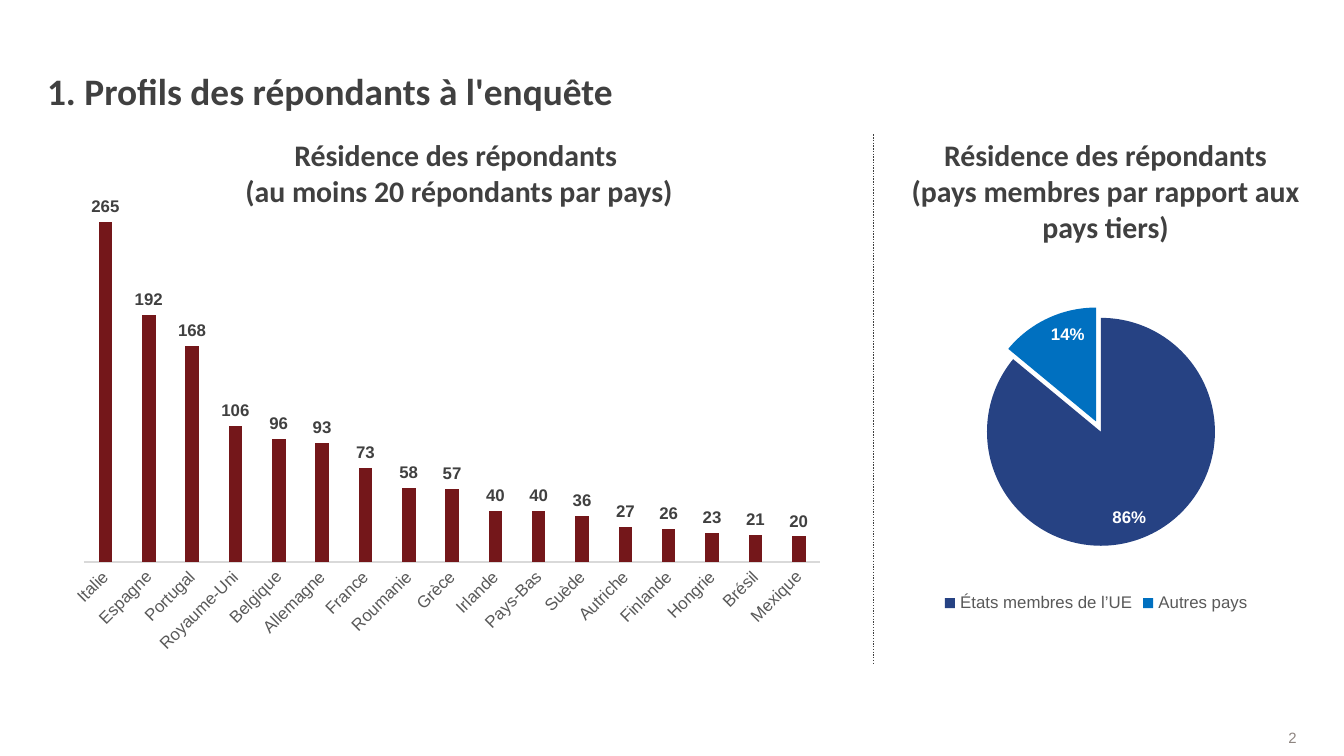
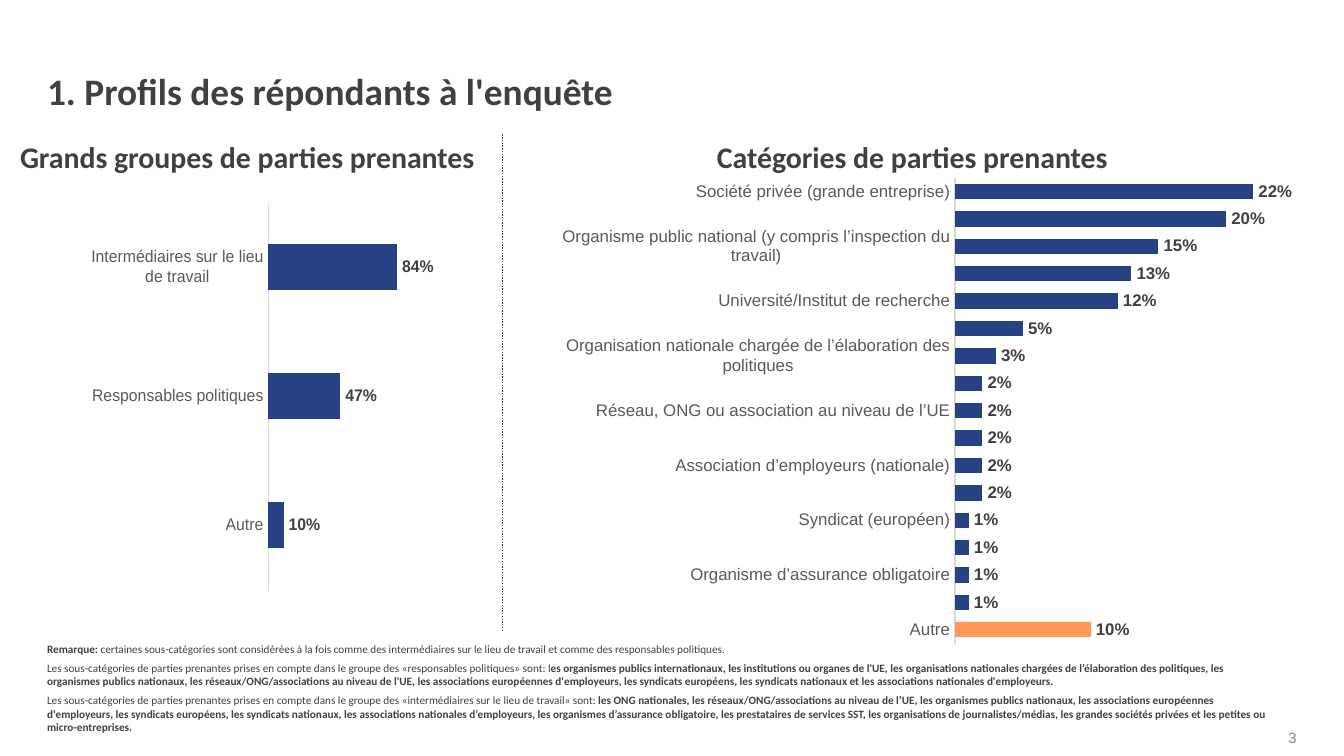
from lxml.etree import SubElement
from pptx import Presentation
from pptx.chart.data import CategoryChartData
from pptx.dml.color import RGBColor
from pptx.enum.chart import XL_CHART_TYPE as ChartType
from pptx.enum.chart import XL_LABEL_POSITION as LabelPosition
from pptx.enum.chart import XL_LEGEND_POSITION as LegendPosition
from pptx.enum.chart import XL_TICK_MARK as TickMark
from pptx.enum.dml import MSO_LINE
from pptx.enum.shapes import MSO_CONNECTOR, MSO_SHAPE
from pptx.enum.text import MSO_ANCHOR, MSO_AUTO_SIZE, PP_ALIGN
from pptx.oxml import parse_xml
from pptx.oxml.ns import nsdecls, qn
from pptx.util import Cm, Pt

# Shared style
DARK, GREY, AXIS, WHITE = "404040", "595959", "D9D9D9", "FFFFFF"
PAGE_GREY, MAROON, NAVY, BLUE, ORANGE = "8E8581", "74171A", "264283", "0070C0", "FF9956"
HEADING_FONT, CHART_FONT = "Calibri", "Arial"
COMPARISON_LAYOUT = 4
TITLE = "1. Profils des répondants à l'enquête"
DIVIDER_TOP = 2.54

# Content
COUNTRIES = {
    "Italie": 265, "Espagne": 192, "Portugal": 168, "Royaume-Uni": 106,
    "Belgique": 96, "Allemagne": 93, "France": 73, "Roumanie": 58, "Grèce": 57,
    "Irlande": 40, "Pays-Bas": 40, "Suède": 36, "Autriche": 27, "Finlande": 26,
    "Hongrie": 23, "Brésil": 21, "Mexique": 20,
}
MEMBERSHIP = {"États membres de l’UE": 0.86, "Autres pays": 0.14}
GROUPS = {
    "Intermédiaires sur le lieu de travail": 0.84,
    "Responsables politiques": 0.47,
    "Autre": 0.1,
}
CATEGORIES = {
    "Société privée (grande entreprise)": 0.22,
    "Société privée (PME)": 0.2,
    "Organisme public national (y compris l’inspection du travail)": 0.15,
    "Prestataire de services SST, par ex. consultant": 0.13,
    "Université/Institut de recherche": 0.12,
    "Syndicat (national)": 0.05,
    "Organisation nationale chargée de l’élaboration des politiques": 0.03,
    "Organisation non gouvernementale (ONG) nationale": 0.02,
    "Réseau, ONG ou association au niveau de l’UE": 0.02,
    "Institution ou organe de l’UE": 0.02,
    "Association d’employeurs (nationale)": 0.02,
    "Organisme public international": 0.02,
    "Syndicat (européen)": 0.01,
    "Organisation de journalistes/médias": 0.01,
    "Organisme d’assurance obligatoire": 0.01,
    "Association d’employeurs (européenne)": 0.01,
    "Autre": 0.1,
}
# Each note is a list of (text, bold) runs
NOTES = [
    [("Remarque: ", True),
     ("certaines sous-catégories sont considérées à la fois comme des intermédiaires "
      "sur le lieu de travail et comme des responsables politiques.", False)],
    [("Les sous-catégories de parties prenantes prises en compte dans le groupe des "
      "«responsables politiques» sont: l", False),
     ("es organismes publics internationaux, les institutions ou organes de l'UE, les "
      "organisations nationales chargées de l’élaboration des politiques, les organismes "
      "publics nationaux, les réseaux/ONG/associations au niveau de l'UE, les associations "
      "européennes d'employeurs, les syndicats européens, les syndicats nationaux et les "
      "associations nationales d'employeurs.", True)],
    [("Les sous-catégories de parties prenantes prises en compte dans le groupe des "
      "«intermédiaires sur le lieu de travail» sont: ", False),
     ("les ONG nationales, les réseaux/ONG/associations au niveau de l’UE, les organismes "
      "publics nationaux, les associations européennes d'employeurs, les syndicats européens, "
      "les syndicats nationaux, les associations nationales d’employeurs, les organismes "
      "d’assurance obligatoire, les prestataires de services SST, les organisations de "
      "journalistes/médias, les grandes sociétés privées et les petites ou "
      "micro-entreprises.", True)],
]


def color(hex_string):
    return RGBColor.from_string(hex_string)


def set_font(font, size, hex_string, name=CHART_FONT, bold=False):
    font.size, font.name, font.bold = Pt(size), name, bold
    font.color.rgb = color(hex_string)


def place(shape, box):
    shape.left, shape.top, shape.width, shape.height = (Cm(value) for value in box)


def set_frame(text_frame, anchor, top_margin=0):
    text_frame.word_wrap = True
    text_frame.auto_size = MSO_AUTO_SIZE.NONE
    text_frame.vertical_anchor = anchor
    text_frame.margin_left = text_frame.margin_right = text_frame.margin_bottom = 0
    text_frame.margin_top = Cm(top_margin)


# Text regions
def fill_placeholder(shape, box, text, size, align, anchor, top_margin=0):
    place(shape, box)
    set_frame(shape.text_frame, anchor, top_margin)
    shape.text_frame.text = text
    paragraph = shape.text_frame.paragraphs[0]
    paragraph.alignment = align
    paragraph.space_before = Pt(0)
    for run in paragraph.runs:
        set_font(run.font, size, DARK, HEADING_FONT, True)


def add_page_number(slide, box, number):
    shape = slide.shapes.add_shape(MSO_SHAPE.RECTANGLE, *(Cm(value) for value in box))
    shape.shadow.inherit = False
    shape.fill.solid()
    shape.fill.fore_color.rgb = color(WHITE)
    shape.line.fill.background()
    set_frame(shape.text_frame, MSO_ANCHOR.MIDDLE)
    shape.text_frame.text = str(number)
    paragraph = shape.text_frame.paragraphs[0]
    paragraph.alignment = PP_ALIGN.RIGHT
    set_font(paragraph.runs[0].font, 8, PAGE_GREY)


def add_notes(slide, box, notes):
    text_frame = slide.shapes.add_textbox(*(Cm(value) for value in box)).text_frame
    set_frame(text_frame, MSO_ANCHOR.TOP)
    for index, note in enumerate(notes):
        paragraph = text_frame.add_paragraph() if index else text_frame.paragraphs[0]
        paragraph.space_before = Pt(3 if index else 0)
        for text, bold in note:
            run = paragraph.add_run()
            run.text = text
            set_font(run.font, 6, DARK, HEADING_FONT, bold)


def add_divider(slide, x, bottom):
    line = slide.shapes.add_connector(
        MSO_CONNECTOR.STRAIGHT, Cm(x), Cm(DIVIDER_TOP), Cm(x), Cm(bottom))
    line.line.color.rgb = color(DARK)
    line.line.width = Pt(0.75)
    line.line.dash_style = MSO_LINE.ROUND_DOT
    SubElement(line.element.spPr, qn("a:effectLst"))


# Charts
def add_chart(slide, box, chart_type, values, number_format, label_color, position):
    data = CategoryChartData(number_format=number_format)
    data.categories = list(values)
    data.add_series("Series 1", list(values.values()))
    chart = slide.shapes.add_chart(chart_type, *(Cm(value) for value in box), data).chart
    chart.has_title = chart.has_legend = False
    set_font(chart.font, 10, "000000")
    plot = chart.plots[0]
    plot.has_data_labels = True
    labels = plot.data_labels
    labels.show_value, labels.show_percentage = True, False
    labels.number_format, labels.number_format_is_linked = number_format, False
    labels.position = position
    set_font(labels.font, 9, label_color, bold=True)
    return chart


def paint_point(series, index, hex_string):
    fill = series.points[index].format.fill
    fill.solid()
    fill.fore_color.rgb = color(hex_string)


def add_bar_chart(slide, box, chart_type, values, number_format, bar_color, gap, overlap=0):
    chart = add_chart(slide, box, chart_type, values, number_format, DARK,
                      LabelPosition.OUTSIDE_END)
    plot = chart.plots[0]
    plot.vary_by_categories = False
    plot.gap_width, plot.overlap = gap, overlap
    series = plot.series[0]
    series.invert_if_negative = False
    series.format.fill.solid()
    series.format.fill.fore_color.rgb = color(bar_color)
    chart.value_axis.visible = False
    chart.value_axis.has_major_gridlines = False
    axis = chart.category_axis
    axis.major_tick_mark = axis.minor_tick_mark = TickMark.NONE
    axis.reverse_order = chart_type == ChartType.BAR_CLUSTERED
    axis.format.line.color.rgb = color(AXIS)
    axis.format.line.width = Pt(0.75)
    set_font(axis.tick_labels.font, 9, GREY)
    return chart


def add_pie_chart(slide, box, values, slice_colors, exploded):
    chart = add_chart(slide, box, ChartType.PIE, values, "0%", WHITE,
                      LabelPosition.INSIDE_END)
    chart.plots[0].vary_by_categories = True
    for index, hex_string in enumerate(slice_colors):
        paint_point(chart.plots[0].series[0], index, hex_string)
    chart.has_legend = True
    chart.legend.position = LegendPosition.BOTTOM
    chart.legend.include_in_layout = False
    set_font(chart.legend.font, 9, GREY)
    # Pull one slice out
    properties = chart.element.xpath(f"//c:dPt[c:idx/@val='{exploded}']/c:spPr")[0]
    properties.addprevious(parse_xml(f'<c:explosion {nsdecls("c")} val="10"/>'))
    # Inner plot box, as shares of the chart
    plot_area = chart.element.xpath("//c:plotArea")[0]
    for layout in plot_area.findall(qn("c:layout")):
        plot_area.remove(layout)
    layout = SubElement(plot_area, qn("c:layout"))
    manual = SubElement(layout, qn("c:manualLayout"))
    for tag, value in (("layoutTarget", "inner"), ("xMode", "edge"), ("yMode", "edge"),
                       ("x", "0.28"), ("y", "0.13"), ("w", "0.46"), ("h", "0.66")):
        SubElement(manual, qn(f"c:{tag}")).set("val", value)
    plot_area.insert(0, layout)


# Slides
def add_profile_slide(presentation, number, headings):
    slide = presentation.slides.add_slide(presentation.slide_layouts[COMPARISON_LAYOUT])
    holders = {shape.placeholder_format.idx: shape for shape in slide.placeholders}
    fill_placeholder(holders[0], (0.89, 0.53, 17.81, 1.6), TITLE, 20,
                     PP_ALIGN.LEFT, MSO_ANCHOR.BOTTOM)
    for index, (text, box) in zip((1, 3), headings):
        fill_placeholder(holders[index], box, text, 16,
                         PP_ALIGN.CENTER, MSO_ANCHOR.TOP, 0.05)
    for index in (2, 4):
        holders[index].element.getparent().remove(holders[index].element)
    add_page_number(slide, (20.9, 13.74, 3.61, 0.41), number)
    return slide


def add_residence_slide(presentation):
    slide = add_profile_slide(presentation, 2, [
        ("Résidence des répondants\v (au moins 20 répondants par pays)",
         (3.51, 2.54, 10.21, 0.81)),
        ("Résidence des répondants (pays membres par rapport aux pays tiers)",
         (17.2, 2.54, 7.39, 0.81)),
    ])
    add_divider(slide, 16.51, 12.55)
    chart = add_bar_chart(slide, (1.09, 3.15, 14.71, 9.4), ChartType.COLUMN_CLUSTERED,
                          COUNTRIES, "0", MAROON, 219, -27)
    chart.element.xpath("//c:catAx/c:txPr/a:bodyPr")[0].set("rot", "-2700000")
    add_pie_chart(slide, (16.03, 5.16, 9.37, 6.53), MEMBERSHIP, (NAVY, BLUE), 1)


def add_stakeholder_slide(presentation):
    slide = add_profile_slide(presentation, 3, [
        ("Grands groupes de parties prenantes", (-0.43, 2.57, 10.21, 0.81)),
        ("Catégories de parties prenantes", (12.14, 2.57, 10.21, 0.81)),
    ])
    add_notes(slide, (0.89, 12.14, 23.22, 1.5), NOTES)
    add_divider(slide, 9.5, 11.94)
    add_bar_chart(slide, (1.6, 3.68, 6.6, 7.62), ChartType.BAR_CLUSTERED,
                  GROUPS, "0%", NAVY, 182)
    chart = add_bar_chart(slide, (10.34, 3.18, 14.4, 9.17), ChartType.BAR_CLUSTERED,
                          CATEGORIES, "0%", NAVY, 79)
    paint_point(chart.plots[0].series[0], len(CATEGORIES) - 1, ORANGE)


def main():
    presentation = Presentation()
    presentation.slide_width, presentation.slide_height = Cm(25.4), Cm(14.29)
    add_residence_slide(presentation)
    add_stakeholder_slide(presentation)
    presentation.save("out.pptx")


if __name__ == "__main__":
    main()
